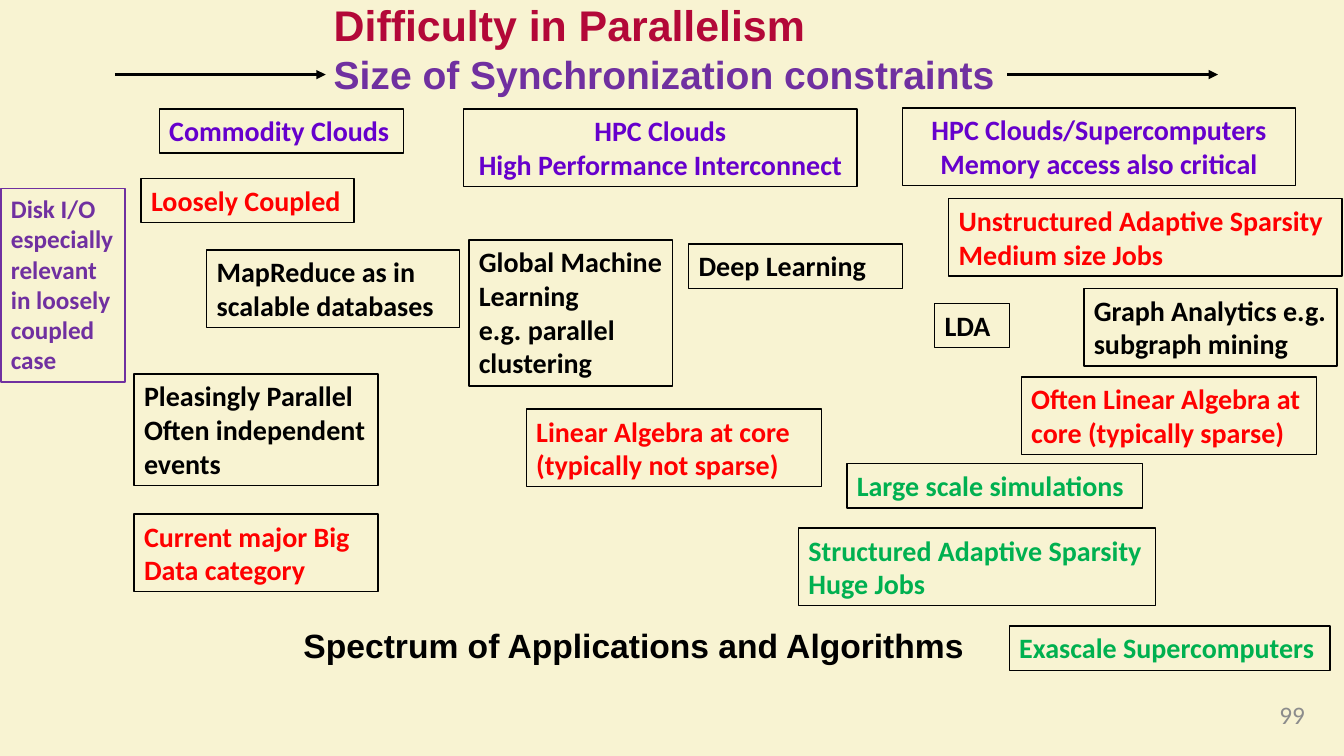
from dataclasses import dataclass

import pptx
import pptx.dml.color
import pptx.enum.shapes
import pptx.enum.text
import pptx.oxml
import pptx.oxml.ns
import pptx.util

Inches = pptx.util.Inches
ALIGN = pptx.enum.text.PP_ALIGN
ANCHOR = pptx.enum.text.MSO_ANCHOR

COLORS = {
    "cream": "F8F3D2",
    "crimson": "B30838",
    "purple": "7030A0",
    "violet": "6600CC",
    "red": "FF0000",
    "green": "00B050",
    "black": "000000",
    "gray": "8C8C8C",
}


@dataclass
class Box:
    left: float
    top: float
    width: float
    height: float
    color: str
    paragraphs: list[str]  # "\n" is a line break within a paragraph
    align: ALIGN = ALIGN.LEFT
    size: float = 20
    outline: str = "black"


@dataclass
class Arrow:
    left: float
    right: float
    y: float = 0.74


BOXES = [
    # Kinds of machine
    Box(1.58, 1.08, 2.42, 0.44, "violet", ["Commodity Clouds"]),
    Box(4.6, 1.08, 3.9, 0.77, "violet",
        ["HPC Clouds", "High Performance Interconnect"], ALIGN.CENTER),
    Box(8.95, 1.07, 3.9, 0.77, "violet",
        ["HPC Clouds/Supercomputers", "Memory access also critical"], ALIGN.CENTER),
    Box(10.01, 6.21, 3.18, 0.44, "green", ["Exascale Supercomputers"]),
    # Loosely coupled applications
    Box(0.01, 1.87, 1.23, 1.92, "purple",
        ["Disk I/O", "especially\nrelevant in loosely", "coupled case"],
        size=18, outline="purple"),
    Box(1.4, 1.77, 2.11, 0.44, "red", ["Loosely Coupled"]),
    Box(2.05, 2.48, 2.51, 0.77, "black", ["MapReduce as in scalable databases"]),
    Box(1.33, 3.71, 2.42, 1.11, "black",
        ["Pleasingly Parallel", "Often independent events"]),
    Box(1.33, 5.1, 2.42, 0.77, "red", ["Current major Big Data category"]),
    # Machine learning
    Box(4.65, 2.38, 2.02, 1.45, "black",
        ["Global Machine Learning", "e.g. parallel clustering"]),
    Box(6.83, 2.42, 2.12, 0.44, "black", ["Deep Learning"]),
    Box(5.22, 4.06, 2.93, 0.77, "red",
        ["Linear Algebra at core (typically not sparse)"]),
    # Sparse problems and simulations
    Box(9.41, 1.97, 3.9, 0.77, "red",
        ["Unstructured Adaptive Sparsity", "Medium size Jobs"]),
    Box(9.27, 3.01, 0.74, 0.44, "black", ["LDA"]),
    Box(10.75, 2.86, 2.51, 0.77, "black", ["Graph Analytics e.g. subgraph mining"]),
    Box(10.13, 3.74, 2.93, 0.77, "red",
        ["Often Linear Algebra at core (typically sparse)"]),
    Box(8.4, 4.6, 2.93, 0.44, "green", ["Large scale simulations"]),
    Box(7.92, 5.24, 3.54, 0.77, "green",
        ["Structured Adaptive Sparsity", "Huge Jobs"]),
]
ARROWS = [Arrow(1.14, 3.23), Arrow(9.99, 12.08)]


def rgb(name: str) -> pptx.dml.color.RGBColor:
    return pptx.dml.color.RGBColor.from_string(COLORS[name])


def add_run(p, text: str, size: float, color: str, font: str, bold: bool = True) -> None:
    r = p.add_run()
    r.text = text
    r.font.name = font
    r.font.size = pptx.util.Pt(size)
    r.font.bold = bold
    r.font.color.rgb = rgb(color)


def place(sp, left: float, top: float, width: float, height: float, anchor: ANCHOR):
    """Move a placeholder and return its formatted text frame."""
    sp.left, sp.top = Inches(left), Inches(top)
    sp.width, sp.height = Inches(width), Inches(height)
    tf = sp.text_frame
    tf.word_wrap = True
    tf.auto_size = pptx.enum.text.MSO_AUTO_SIZE.NONE
    tf.vertical_anchor = anchor
    return tf


def add_box(slide, box: Box) -> None:
    sp = slide.shapes.add_shape(
        pptx.enum.shapes.MSO_SHAPE.RECTANGLE, Inches(box.left), Inches(box.top),
        Inches(box.width), Inches(box.height))
    sp.shadow.inherit = False
    sp.fill.background()
    sp.line.color.rgb = rgb(box.outline)
    sp.line.width = pptx.util.Pt(1)
    tf = sp.text_frame
    tf.word_wrap = True
    tf.vertical_anchor = ANCHOR.TOP
    tf.auto_size = pptx.enum.text.MSO_AUTO_SIZE.SHAPE_TO_FIT_TEXT
    for i, text in enumerate(box.paragraphs):
        p = tf.add_paragraph() if i else tf.paragraphs[0]
        p.alignment = box.align
        for j, line in enumerate(text.split("\n")):
            if j:
                p.add_line_break()
            add_run(p, line, box.size, box.color, "Calibri")


def add_arrow(slide, arrow: Arrow) -> None:
    line = slide.shapes.add_connector(
        pptx.enum.shapes.MSO_CONNECTOR.STRAIGHT, Inches(arrow.left), Inches(arrow.y),
        Inches(arrow.right), Inches(arrow.y))
    line.line.color.rgb = rgb("black")
    line.line.width = pptx.util.Pt(2.25)
    tail = pptx.oxml.ns.qn("a:tailEnd")
    line.line._get_or_add_ln().append(pptx.oxml.xmlchemy.OxmlElement("a:tailEnd"))
    line.line._get_or_add_ln().find(tail).set("type", "triangle")
    line._element.spPr.append(pptx.oxml.xmlchemy.OxmlElement("a:effectLst"))


def main() -> None:
    prs = pptx.Presentation()
    prs.slide_width, prs.slide_height = Inches(13.33), Inches(7.5)
    slide = prs.slides.add_slide(prs.slide_layouts[1])
    slide.background.fill.solid()
    slide.background.fill.fore_color.rgb = rgb("cream")

    # Title
    tf = place(slide.shapes.title, 3.21, 0.06, 6.92, 0.83, ANCHOR.MIDDLE)
    p = tf.paragraphs[0]
    p.alignment = ALIGN.LEFT
    add_run(p, "Difficulty in Parallelism", 30.6, "crimson", "Arial")
    p.add_line_break()
    add_run(p, "Size of Synchronization constraints", 27.9, "purple", "Arial")

    # Caption below the spectrum
    tf = place(slide.placeholders[1], 2.91, 6.15, 6.92, 0.61, ANCHOR.TOP)
    p = tf.paragraphs[0]
    pPr = p._p.get_or_add_pPr()
    pPr.set("marL", "0")
    pPr.set("indent", "0")
    pPr.append(pptx.oxml.xmlchemy.OxmlElement("a:buNone"))
    p.space_before = pptx.util.Pt(0)
    add_run(p, "Spectrum of Applications and Algorithms", 24, "black", "Arial")

    # Spectrum
    for arrow in ARROWS:
        add_arrow(slide, arrow)
    for box in BOXES:
        add_box(slide, box)

    # Slide number
    sp = slide.shapes.add_textbox(
        Inches(12.08), Inches(6.89), Inches(0.96), Inches(0.32))
    sp.text_frame.word_wrap = True
    p = sp.text_frame.paragraphs[0]
    p.alignment = ALIGN.RIGHT
    add_run(p, "99", 18, "gray", "Calibri", bold=False)

    prs.save("out.pptx")


if __name__ == "__main__":
    main()
